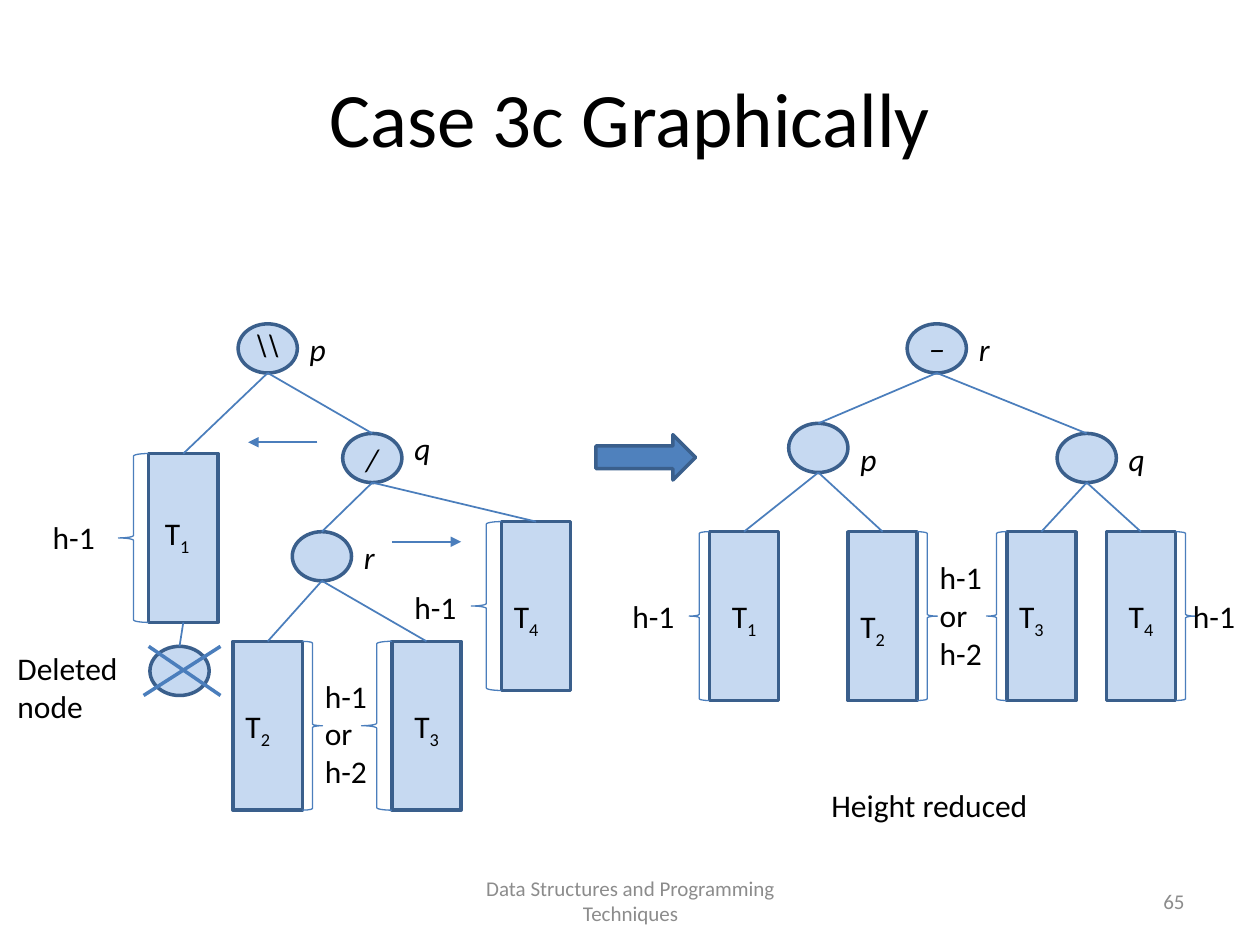
from pptx import Presentation
from pptx.dml.color import RGBColor
from pptx.enum.shapes import MSO_CONNECTOR as Link, MSO_SHAPE as Shape
from pptx.enum.text import MSO_ANCHOR as Anchor, PP_ALIGN as Align
from pptx.oxml.ns import qn
from pptx.util import Inches, Pt
from lxml.etree import SubElement

COLORS = {"fill": "C6D9F1", "outline": "3A5F8C", "edge": "4B7EBC",
          "arrow": "4F81BD", "text": "000000", "footer": "8C8C8C"}
NODE_WIDTH, NODE_HEIGHT = 0.47, 0.39
TREE_WIDTH, TREE_HEIGHT = 0.55, 1.34


def color(name):
    return RGBColor.from_string(COLORS[name])


def add_text(page, text, left, top, width=NODE_WIDTH, height=0.4, size=18,
             tone="text", italic=False, align=Align.LEFT, anchor=Anchor.TOP,
             subscript=""):
    """Add a text box; each line of the text is a paragraph."""
    box = page.shapes.add_textbox(*map(Inches, (left, top, width, height)))
    frame = box.text_frame
    frame.word_wrap = True
    frame.vertical_anchor = anchor
    for number, line in enumerate(text.split("\n")):
        para = frame.add_paragraph() if number else frame.paragraphs[0]
        para.alignment = align
        for part in filter(None, (line, subscript)):
            span = para.add_run()
            span.text = part
            span.font.name = "Calibri"
            span.font.size = Pt(size)
            span.font.italic = italic
            span.font.color.rgb = color(tone)
            if part == subscript:
                span.font._element.set("baseline", "-25000")
    return box


class TreeSlide:
    """Style of the tree diagram and the page it is drawn on."""

    def __init__(self, page):
        self.page = page

    def shape(self, kind, left, top, width, height, fill="fill",
              line="outline", weight=2):
        item = self.page.shapes.add_shape(
            kind, *map(Inches, (left, top, width, height)))
        item.shadow.inherit = False
        if fill:
            item.fill.solid()
            item.fill.fore_color.rgb = color(fill)
        else:
            item.fill.background()
        item.line.color.rgb = color(line)
        item.line.width = Pt(weight)
        return item

    def node(self, left, top, name="", name_top=0, balance="", balance_top=0):
        circle = self.shape(Shape.OVAL, left, top, NODE_WIDTH, NODE_HEIGHT)
        if name:
            add_text(self.page, name, left + NODE_WIDTH, top + name_top,
                     italic=True)
        if balance:
            add_text(self.page, balance, left, top + balance_top, italic=True,
                     align=Align.CENTER)
        return circle

    def subtree(self, left, top, number, label_left, label_top,
                brace_left=0, brace_right=0):
        box = self.shape(Shape.RECTANGLE, left, top, TREE_WIDTH, TREE_HEIGHT)
        if brace_left:
            self.brace(Shape.LEFT_BRACE, left - brace_left, top, brace_left)
        if brace_right:
            self.brace(Shape.RIGHT_BRACE, left + TREE_WIDTH, top, brace_right)
        add_text(self.page, "T", left + label_left, top + label_top,
                 subscript=number)
        return box

    def brace(self, kind, left, top, width):
        self.shape(kind, left, top, width, TREE_HEIGHT, fill=None,
                   line="edge", weight=0.75)

    def line(self, x1, y1, x2, y2, weight=1, arrow=False):
        link = self.page.shapes.add_connector(
            Link.STRAIGHT, *map(Inches, (x1, y1, x2, y2)))
        link.line.color.rgb = color("edge")
        link.line.width = Pt(weight)
        if arrow:
            SubElement(link.line._get_or_add_ln(), qn("a:tailEnd"),
                       type="triangle")
        SubElement(link._element.spPr, qn("a:effectLst"))
        return link

    def edges(self, parent, *children):
        """Join the bottom of a node to the top of each child."""
        for child in children:
            link = self.line(0, 0, 0, 0)
            link.begin_x = parent.left + parent.width // 2
            link.begin_y = parent.top + parent.height
            link.end_connect(child, 0)

    def height_label(self, text, left, top, width=0.63, height=0.4):
        add_text(self.page, text, left, top, width, height)


def main():
    deck = Presentation()
    deck.slide_width, deck.slide_height = Inches(10), Inches(7.5)
    page = deck.slides.add_slide(deck.slide_layouts[6])
    tree = TreeSlide(page)

    # Title and footer
    add_text(page, "Case 3c Graphically", 0.5, 0.3, 9, 1.25, size=44,
             align=Align.CENTER, anchor=Anchor.MIDDLE)
    footer = {"size": 12, "tone": "footer", "anchor": Anchor.MIDDLE}
    add_text(page, "Data Structures and Programming Techniques",
             3.42, 6.95, 3.17, align=Align.CENTER, **footer)
    add_text(page, "65", 7.17, 6.95, 2.33, align=Align.RIGHT, **footer)

    # Tree before the rotation
    p = tree.node(1.89, 2.57, "p", balance="\\\\", balance_top=-0.04)
    q = tree.node(2.72, 3.44, "q", name_top=-0.08, balance="/")
    r = tree.node(2.32, 4.22, "r")
    t1 = tree.subtree(1.18, 3.6, "1", 0.03, 0.43, brace_left=0.24)
    t2 = tree.subtree(1.85, 5.09, "2", 0, 0.47, brace_right=0.16)
    t3 = tree.subtree(3.11, 5.09, "3", 0.08, 0.47, brace_left=0.24)
    t4 = tree.subtree(3.98, 4.14, "4", 0, 0.55, brace_left=0.24)
    tree.edges(p, t1, q)
    tree.edges(q, r, t4)
    tree.edges(r, t2, t3)
    tree.height_label("h-1", 0.32, 4.06)
    tree.height_label("h-1", 3.19, 4.62)
    tree.height_label("h-1\nor\nh-2", 2.48, 5.32, height=1.01)

    # Rotation directions
    tree.line(2.52, 3.51, 1.97, 3.51, arrow=True)
    tree.line(3.11, 4.3, 3.66, 4.3, arrow=True)

    # Deleted node, crossed out
    deleted = tree.node(1.19, 5.13)
    tree.edges(t1, deleted)
    tree.line(1.14, 5.52, 1.75, 5.13, weight=2)
    tree.line(1.18, 5.13, 1.75, 5.52, weight=2)
    add_text(page, "Deleted\nnode", 0.04, 5.1, 1.18, 0.71)

    # Step to the result
    tree.shape(Shape.RIGHT_ARROW, 4.73, 3.45, 0.79, 0.36, fill="arrow")

    # Tree after the rotation
    root = tree.node(7.2, 2.57, "r", balance="−")
    left_node = tree.node(6.26, 3.36, "p", name_top=0.08)
    right_node = tree.node(8.39, 3.44, "q")
    top = 4.22
    t1 = tree.subtree(5.63, top, "1", 0.08, 0.47, brace_left=0.16)
    t2 = tree.subtree(6.73, top, "2", 0, 0.55, brace_right=0.16)
    t3 = tree.subtree(7.99, top, "3", 0, 0.47, brace_left=0.16)
    t4 = tree.subtree(8.78, top, "4", 0.08, 0.47, brace_right=0.16)
    tree.edges(root, left_node, right_node)
    tree.edges(left_node, t1, t2)
    tree.edges(right_node, t3, t4)
    tree.height_label("h-1", 4.92, 4.69)
    tree.height_label("h-1", 9.37, 4.69)
    tree.height_label("h-1\nor\nh-2", 7.36, 4.38, 0.71, 1.01)
    add_text(page, "Height reduced", 6.5, 6.19, 2.28)

    deck.save("out.pptx")


if __name__ == "__main__":
    main()
